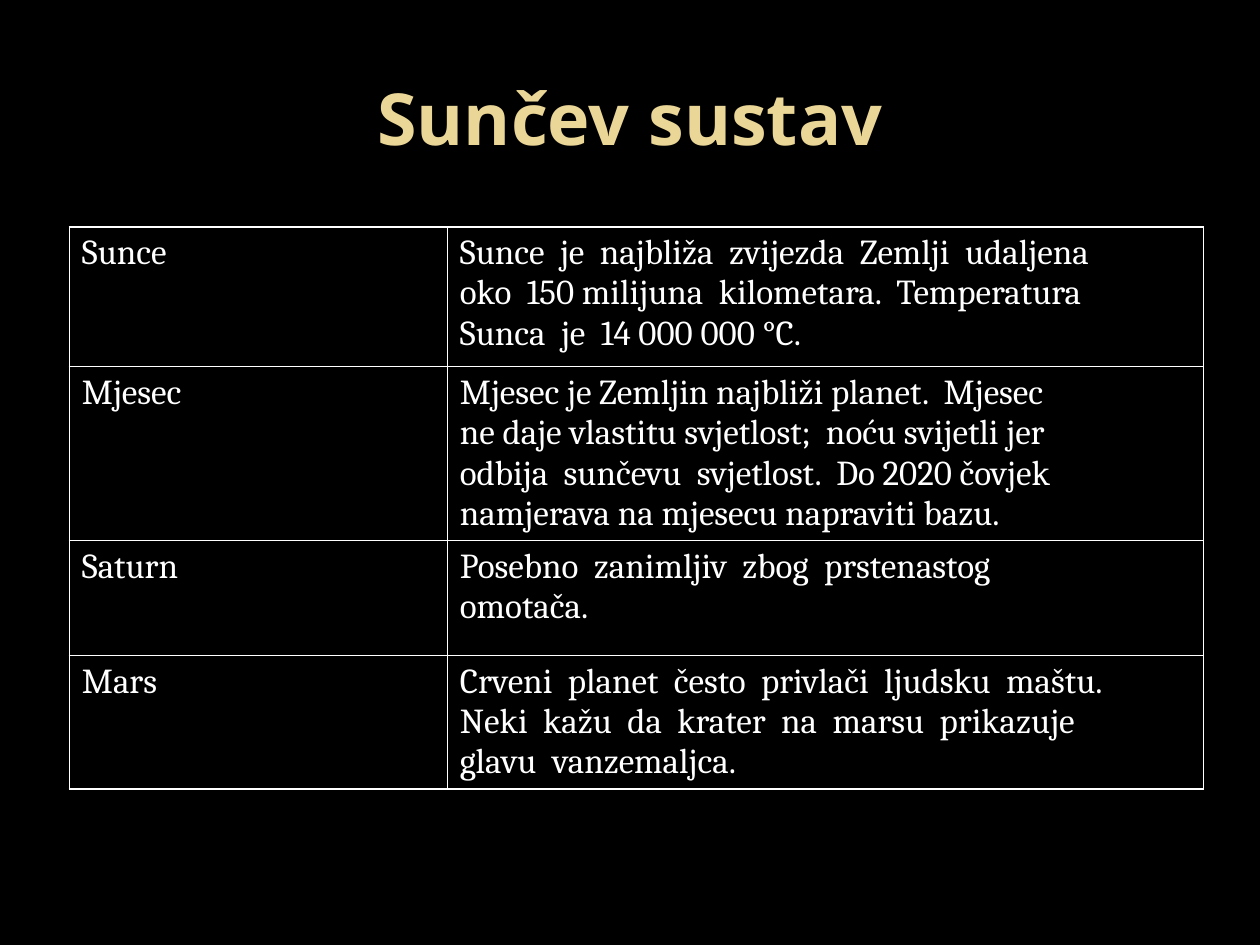
from lxml import etree
from pptx import Presentation
from pptx.dml.color import RGBColor
from pptx.enum import text
from pptx.oxml import ns
from pptx.util import Inches, Pt

COLORS = {"background": "000000", "title": "EAD696", "table": "FFFFFF"}
TITLE_FORMAT = {"name": "Noto Sans", "size": Pt(41), "bold": True}
CELL_FORMAT = {"name": "Cambria", "size": Pt(20), "bold": False}
COLUMN_WIDTHS = [3, 6]
ROW_HEIGHTS = [1.11, 0.91, 0.91, 0.91]
BODIES = [
    ("Sunce", [
        "Sunce  je  najbliža  zvijezda  Zemlji  udaljena",
        "oko  150 milijuna  kilometara.  Temperatura",
        "Sunca  je  14 000 000 °C.",
    ]),
    ("Mjesec", [
        "Mjesec je Zemljin najbliži planet.  Mjesec",
        "ne daje vlastitu svjetlost;  noću svijetli jer",
        "odbija  sunčevu  svjetlost.  Do 2020 čovjek",
        "namjerava na mjesecu napraviti bazu.",
    ]),
    ("Saturn", [
        "Posebno  zanimljiv  zbog  prstenastog",
        "omotača.",
    ]),
    ("Mars", [
        "Crveni  planet  često  privlači  ljudsku  maštu.",
        "Neki  kažu  da  krater  na  marsu  prikazuje",
        "glavu  vanzemaljca.",
    ]),
]


def write_lines(frame, lines, formats, color):
    """Write one formatted paragraph per line."""
    frame.text = "\n".join(lines)
    for paragraph in frame.paragraphs:
        font = paragraph.runs[0].font
        for name, value in formats.items():
            setattr(font, name, value)
        font.color.rgb = RGBColor.from_string(COLORS[color])


def set_borders(cell, color, width=Pt(1)):
    properties = cell._tc.get_or_add_tcPr()
    for position, side in enumerate(("lnL", "lnR", "lnT", "lnB")):
        line = etree.Element(ns.qn(f"a:{side}"), w=str(width))
        fill = etree.SubElement(line, ns.qn("a:solidFill"))
        etree.SubElement(fill, ns.qn("a:srgbClr"), val=COLORS[color])
        properties.insert(position, line)


def set_title(slide, title):
    shape = slide.shapes.title
    box = {"left": 0.5, "top": 0.3, "width": 9, "height": 1.25}
    for name, value in box.items():
        setattr(shape, name, Inches(value))
    write_lines(shape.text_frame, [title], TITLE_FORMAT, "title")
    shape.text_frame.vertical_anchor = text.MSO_ANCHOR.MIDDLE
    shape.text_frame.paragraphs[0].alignment = text.PP_ALIGN.CENTER


def add_body_table(slide):
    frame = slide.shapes.add_table(
        len(BODIES), len(COLUMN_WIDTHS), Inches(0.55), Inches(1.8),
        Inches(sum(COLUMN_WIDTHS)), Inches(sum(ROW_HEIGHTS)))
    table = frame.table
    table.first_row = table.horz_banding = False
    for column, width in zip(table.columns, COLUMN_WIDTHS):
        column.width = Inches(width)
    for row, height, (body, description) in zip(table.rows, ROW_HEIGHTS, BODIES):
        row.height = Inches(height)
        for cell, lines in zip(row.cells, ([body], description)):
            write_lines(cell.text_frame, lines, CELL_FORMAT, "table")
            cell.fill.background()
            set_borders(cell, "table")


def main():
    presentation = Presentation()
    presentation.slide_width, presentation.slide_height = Inches(10), Inches(7.5)
    slide = presentation.slides.add_slide(
        presentation.slide_layouts.get_by_name("Title Only"))
    background = slide.background.fill
    background.solid()
    background.fore_color.rgb = RGBColor.from_string(COLORS["background"])
    set_title(slide, "Sunčev sustav")
    add_body_table(slide)
    presentation.save("out.pptx")


if __name__ == "__main__":
    main()
